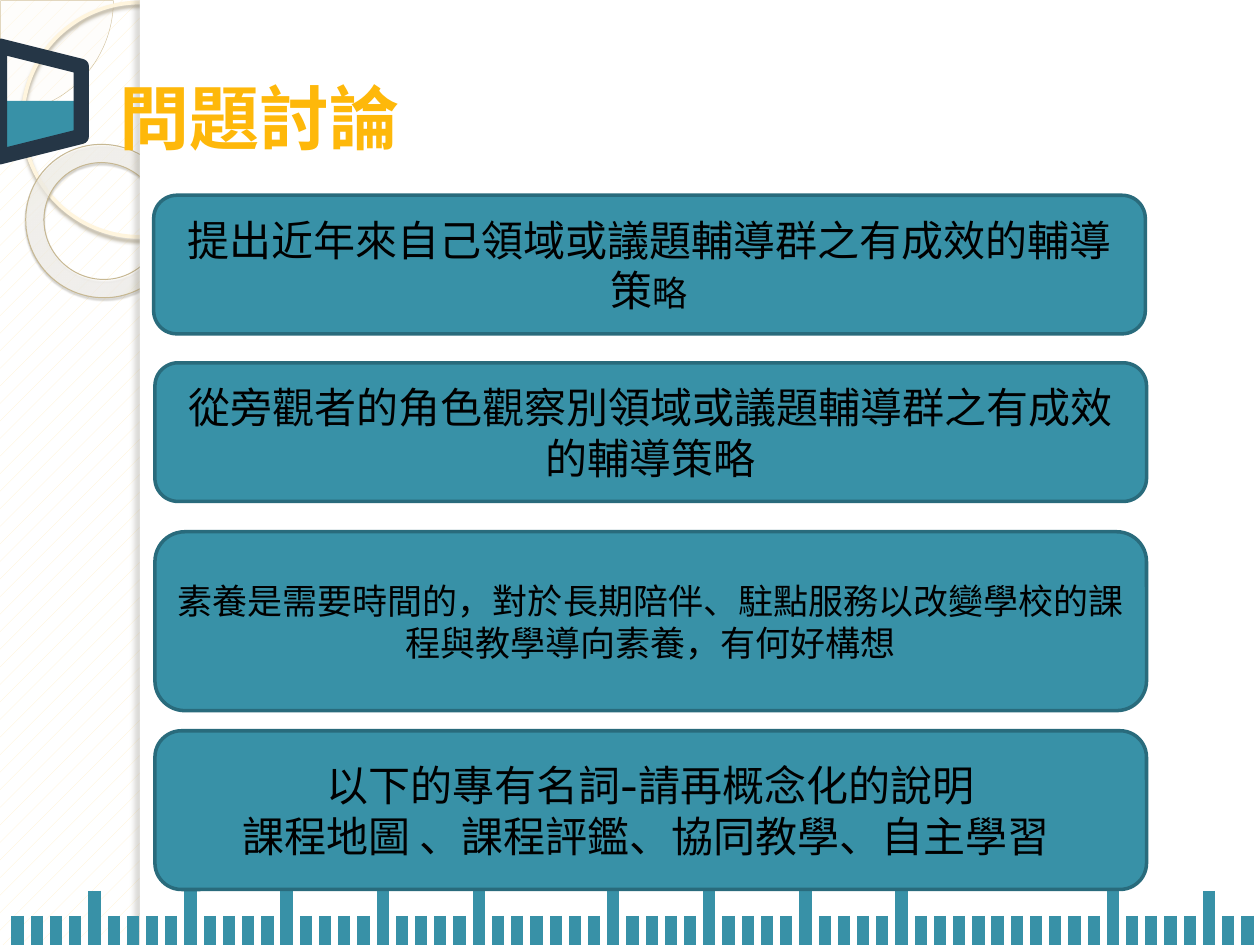
import pptx
import pptx.util
import pptx.dml.color
import pptx.enum.dml
import pptx.enum.shapes
import pptx.enum.text
import pptx.oxml
import pptx.oxml.ns

Inches = pptx.util.Inches
Pt = pptx.util.Pt
SHAPE = pptx.enum.shapes.MSO_SHAPE
qn = pptx.oxml.ns.qn

COLORS = {
    "teal": "3891A7", "teal_edge": "296B7C", "navy": "253646",
    "gold": "FEB80A", "ink": "000000", "white": "FFFFFF", "cream": "FFF1CE",
    "pie": "FEFAF4", "pie_edge": "D3C39F", "ring": "FFF5DE",
    "ring_shade": "B0A68F", "donut_edge": "C7B893", "donut_shade": "5A5444",
    "panel_shade": "736F63", "donut_core": "FFFCF6", "donut_mid": "FFFEFB",
    "donut_rim": "F0D28E",
}
LATIN, CJK = "Cabin", "Noto Sans CJK TC"


def rgb(name):
    """Return the named colour."""
    return pptx.dml.color.RGBColor.from_string(COLORS[name])


def xml(text):
    """Parse a drawing element written without its namespace."""
    head, rest = text.split(" ", 1)
    return pptx.oxml.parse_xml(f"{head} {pptx.oxml.ns.nsdecls('a')} {rest}")


def alpha_color(name, opacity):
    """Return the markup of a partly transparent colour."""
    return f'<a:srgbClr val="{COLORS[name]}"><a:alpha val="{opacity * 1000}"/></a:srgbClr>'


def style(shape, fill=None, edge=None, weight=0):
    """Give a shape its fill and outline, without a shadow."""
    shape.shadow.inherit = False
    if fill:
        shape.fill.solid()
        shape.fill.fore_color.rgb = rgb(fill)
    else:
        shape.fill.background()
    if edge:
        shape.line.color.rgb = rgb(edge)
        shape.line.width = Pt(weight)
    else:
        shape.line.fill.background()
    return shape


def add_shape(slide, kind, box, **look):
    """Add a styled preset shape in a box given in inches."""
    return style(slide.shapes.add_shape(kind, *map(Inches, box)), **look)


def cast_shadow(shape, color, opacity, blur, distance, angle):
    """Add an outer shadow to a shape."""
    shape._element.spPr.find(qn("a:effectLst")).append(xml(
        f'<a:outerShdw blurRad="{Pt(blur)}" dist="{Pt(distance)}" dir="{angle * 60000}" '
        f'algn="tl" rotWithShape="0">{alpha_color(color, opacity)}</a:outerShdw>'))


def fill_radial(shape, stops):
    """Replace an empty fill with a radial gradient."""
    marks = "".join(f'<a:gs pos="{at * 1000}">{alpha_color(color, opacity)}</a:gs>'
                    for at, color, opacity in stops)
    properties = shape._element.spPr
    properties.replace(properties.find(qn("a:noFill")), xml(
        f'<a:gradFill rotWithShape="1"><a:gsLst>{marks}</a:gsLst><a:path path="circle">'
        '<a:fillToRect l="-408000" t="-50000" r="508000" b="150000"/></a:path></a:gradFill>'))


def add_runs(paragraph, runs, color, bold=False):
    """Add (text, size, font) runs to a paragraph."""
    for text, size, font in runs:
        run = paragraph.add_run()
        run.text = text
        run.font.size = Pt(size)
        run.font.bold = bold
        run.font.color.rgb = rgb(color)
        run.font.name = font
        run.font._element.append(xml(f'<a:ea typeface="{CJK}"/>'))


def draw_backdrop(slide, left, top, width, height):
    """Draw the patterned margin, its circles and the white panel."""
    pattern = slide.background.fill
    pattern.patterned()
    pattern.pattern = pptx.enum.dml.MSO_PATTERN.PERCENT_5
    pattern.fore_color.rgb = rgb("cream")
    pattern.back_color.rgb = rgb("white")

    corner = add_shape(slide, SHAPE.PIE, (left - 0.89, top - 0.89, 1.79, 1.79),
                       fill="pie", edge="pie_edge", weight=0.25)
    corner.adjustments[0], corner.adjustments[1] = 0, 54.02
    corner._element.spPr.find(".//" + qn("a:srgbClr")).append(xml('<a:alpha val="33000"/>'))

    ring = add_shape(slide, SHAPE.OVAL, (left + 0.18, top + 0.02, 1.86, 1.86),
                     edge="ring", weight=2.15)
    cast_shadow(ring, "ring_shade", 85, 2, 2, 90)

    donut = add_shape(slide, SHAPE.DONUT, (left + 0.2, top + 1.15, 1.23, 1.21),
                      edge="donut_edge", weight=0.58)
    donut.adjustments[0] = 0.12
    donut.rotation = 38.6
    fill_radial(donut, [(0, "donut_core", 70), (70, "donut_mid", 55), (100, "donut_rim", 60)])
    cast_shadow(donut, "donut_shade", 35, 1, 1.2, 75)

    margin = 1.11
    add_shape(slide, SHAPE.RECTANGLE, (left + margin, top, width - margin, height), fill="white")
    panel_edge = add_shape(slide, SHAPE.RECTANGLE, (left + margin, top, 0.08, height), fill="white")
    cast_shadow(panel_edge, "panel_shade", 25, 3, 3, 180)


def draw_beaker(slide, left, top):
    """Draw the tilted beaker and its liquid."""
    outline = [(0.04, 0.44), (0.69, 0.44), (0.69, 0.67), (0.04, 0.89)]
    points = [(Inches(left + x), Inches(top + y)) for x, y in outline]
    builder = slide.shapes.build_freeform(*points[0])
    builder.add_line_segments(points[1:], close=True)
    style(builder.convert_to_shape(), fill="teal")
    glass = add_shape(slide, SHAPE.TRAPEZOID, (left - 0.12, top + 0.12, 0.88, 0.65),
                      edge="navy", weight=8.75)
    glass.rotation = 90


def draw_ruler(slide, left, bottom):
    """Draw the row of tick bars along the bottom edge."""
    tall = {*range(4, 25, 5), *range(31, 47, 5), *range(57, 63, 5)}
    for index in range(65):
        x = Inches(left + index * 9.76 / 64)
        height = 0.43 if index in tall else 0.23
        tick = slide.shapes.add_connector(pptx.enum.shapes.MSO_CONNECTOR.STRAIGHT,
                                          x, Inches(bottom - height), x, Inches(bottom))
        tick.line.color.rgb = rgb("teal")
        tick.line.width = Pt(7)
        tick._element.spPr.append(pptx.oxml.parse_xml(
            f"<a:effectLst {pptx.oxml.ns.nsdecls('a')}/>"))


def draw_title(slide, box, title):
    """Write the slide title."""
    frame = slide.shapes.add_textbox(*map(Inches, box)).text_frame
    frame.word_wrap = True
    frame.paragraphs[0].space_before = Pt(6)
    add_runs(frame.paragraphs[0], [(title, 40, LATIN)], "gold", bold=True)


def draw_question(slide, box, lines):
    """Draw one rounded discussion card."""
    card = add_shape(slide, SHAPE.ROUNDED_RECTANGLE, box,
                     fill="teal", edge="teal_edge", weight=2)
    frame = card.text_frame
    frame.word_wrap = True
    frame.vertical_anchor = pptx.enum.text.MSO_ANCHOR.MIDDLE
    for index, runs in enumerate(lines):
        paragraph = frame.add_paragraph() if index else frame.paragraphs[0]
        paragraph.alignment = pptx.enum.text.PP_ALIGN.CENTER
        add_runs(paragraph, runs, "ink")


QUESTIONS = [
    ((1.22, 1.55, 7.87, 1.1),
     [[("提出近年來自己領域或議題輔導群之有成效的輔導策", 24, LATIN), ("略", 20, LATIN)]]),
    ((1.23, 2.88, 7.87, 1.1),
     [[("從旁觀者的角色觀察別領域或議題輔導群之有成效的輔導策略", 24, LATIN)]]),
    ((1.23, 4.22, 7.87, 1.42),
     [[("素養是需要時間的", 20, LATIN),
       ("，對於長期陪伴、駐點服務以改變學校的課程與教學導向素養，有何好構想", 20, CJK)]]),
    ((1.23, 5.8, 7.87, 1.26),
     [[("以下的專有名詞-請再概念化的說明", 24, LATIN)],
      [("課程地圖 ", 24, LATIN), ("、課程評鑑、", 24, CJK),
       ("協同教學", 24, LATIN), ("、自主學習 ", 24, CJK)]]),
]


def main():
    """Build the discussion slide."""
    deck = pptx.Presentation()
    deck.slide_width, deck.slide_height = Inches(10), Inches(7.5)
    slide = deck.slides.add_slide(deck.slide_layouts[6])
    draw_backdrop(slide, 0, 0, 10, 7.5)
    draw_beaker(slide, 0, 0.36)
    draw_ruler(slide, 0.14, 7.5)
    draw_title(slide, (0.85, 0.54, 3.07, 0.77), "問題討論")
    for box, lines in QUESTIONS:
        draw_question(slide, box, lines)
    deck.save("out.pptx")


if __name__ == "__main__":
    main()
